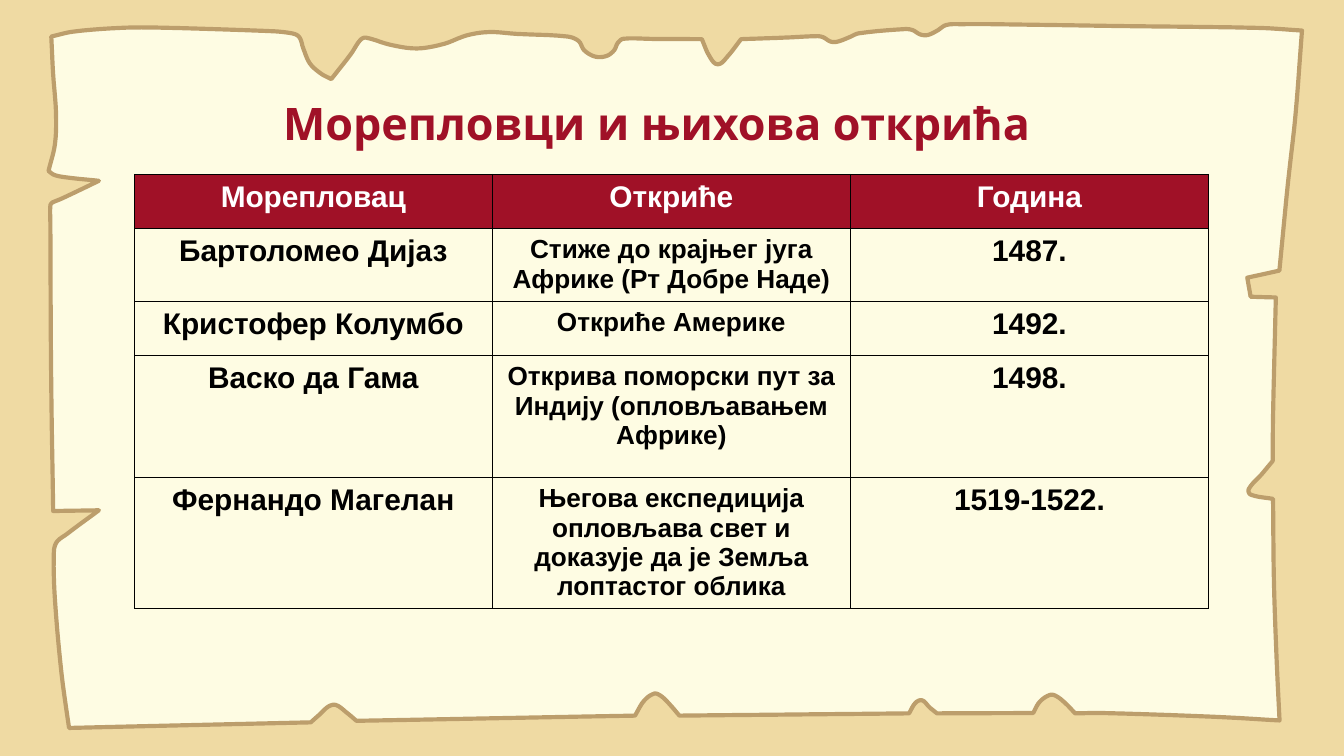
"""Builds a slide with a table of seafarers on a torn parchment."""
import math

from lxml import etree
from pptx import Presentation
from pptx.dml.color import RGBColor
from pptx.enum.shapes import MSO_SHAPE
from pptx.enum.text import MSO_ANCHOR, PP_ALIGN
from pptx.oxml.ns import qn
from pptx.util import Pt

RECTANGLE = MSO_SHAPE.RECTANGLE
BOTTOM = MSO_ANCHOR.BOTTOM
CENTER = PP_ALIGN.CENTER

SAND = RGBColor(0xEF, 0xDA, 0xA3)
PARCHMENT = RGBColor(0xFE, 0xFC, 0xE3)
EDGE = RGBColor(0xBC, 0x9E, 0x6C)
CRIMSON = RGBColor(0xA0, 0x11, 0x27)
WHITE = RGBColor(0xFF, 0xFF, 0xFF)
BLACK = RGBColor(0x00, 0x00, 0x00)

WIDTH, HEIGHT = 720, 405
CURVE_STEPS = 5
TORN_START = (27.5, 19.6)
TORN_STROKES = [
    [(39, 17), (64, 15), (84, 14.8), (142, 16.6), (154, 17.5), (160, 19.5),
     (162.5, 26), (166, 34), (172, 39.5), (177.5, 42.4)],
    [(188, 29), (193, 21.5), (196, 20.2), (209, 24), (223.5, 26), (238, 23.5),
     (250, 19), (262, 17.2), (277, 18.2), (304, 19.6), (310, 22), (313, 27),
     (319, 30.4), (325, 30), (329, 27), (331, 23), (334, 20.8), (350, 20.9),
     (376, 21)],
    [(380, 30), (384.5, 34.5), (390, 30), (397, 21)],
    [(420, 20.2), (438, 19.4), (441, 20), (445, 22.3), (448.5, 22.4),
     (455, 20), (460, 17.9), (485, 15.6), (489, 16.2), (493, 18.5),
     (497, 18.8), (502, 16.5), (507, 13.4), (516, 13), (532, 13), (602, 14),
     (675, 15), (697.5, 16.4)],
    [(694, 62), (690, 98), (685.4, 145)],
    [(668.2, 148.8)],
    [(670, 159)],
    [(683.5, 159.4)],
    [(682, 223), (681.8, 247)],
    [(676, 254), (669, 262), (670, 265), (682, 267.3)],
    [(682.5, 312), (684, 355), (685.5, 386)],
    [(650, 384), (590, 382), (576, 382.2)],
    [(571, 377), (566, 373), (562.5, 372.3), (557, 376), (553.5, 382)],
    [(502, 382.2)],
    [(498, 379), (494, 375.2), (490.5, 376.5), (487, 382.2)],
    [(364, 383.4)],
    [(358, 376.5), (354, 372.8), (350.5, 371.6), (345, 375.5), (340.2, 383.4)],
    [(191, 386.2)],
    [(186, 382), (180, 377.7), (176, 378.5), (171, 383), (166.5, 387)],
    [(37, 390)],
    [(33, 361), (29.5, 322), (28.8, 299), (30, 291), (36, 286), (53, 273.4)],
    [(28.5, 273.8)],
    [(27.4, 200), (27, 120), (27, 110), (28, 108.5)],
    [(34, 106), (53, 96.9)],
    [(35, 95), (29, 93.7), (26, 91.6)],
    [(29.5, 77), (30, 60), (28.5, 40), TORN_START],
]

COLUMN_WIDTH = 191.8
ROW_HEIGHTS = [29, 39.1, 29, 65.3, 70.2]
VOYAGES = [
    ("Морепловац", "Откриће", "Година"),
    ("Бартоломео Дијаз", "Стиже до крајњег југа Африке (Рт Добре Наде)", "1487."),
    ("Кристофер Колумбо", "Откриће Америке", "1492."),
    ("Васко да Гама", "Открива поморски пут за Индију (опловљавањем Африке)", "1498."),
    ("Фернандо Магелан",
     "Његова експедиција опловљава свет и доказује да је Земља лоптастог облика",
     "1519-1522."),
]


def smooth(points):
    """Return points on a smooth curve through the given ones, without the first."""
    last = len(points) - 1
    directions = []
    for index in range(last + 1):
        before, after = points[max(index - 1, 0)], points[min(index + 1, last)]
        span = math.dist(before, after)
        directions.append([(b - a) / span for a, b in zip(before, after)])
    curve = []
    for index in range(last):
        start, end = points[index], points[index + 1]
        chord = math.dist(start, end)
        for step in range(1, CURVE_STEPS + 1):
            t = step / CURVE_STEPS
            blend = t * t * (3 - 2 * t)
            leave, arrive = t * (1 - t) ** 2 * chord, t * t * (t - 1) * chord
            curve.append(tuple(
                start[axis] + blend * (end[axis] - start[axis])
                + leave * directions[index][axis]
                + arrive * directions[index + 1][axis]
                for axis in (0, 1)))
    return curve


class SlideWriter:
    """Holds the style and the current slide."""

    def __init__(self, slide):
        self.shapes = slide.shapes
        self.table_font = "Arial"
        self.title_font = "Open Sans"

    def style(self, frame, font, size, color):
        """Centre and format all text of a frame."""
        for para in frame.paragraphs:
            para.alignment = CENTER
            for span in para.runs:
                span.font.name = font
                span.font.size = Pt(size)
                span.font.bold = True
                span.font.color.rgb = color

    def backdrop(self, color):
        """Cover the page with one colour."""
        box = self.shapes.add_shape(RECTANGLE, 0, 0, Pt(WIDTH), Pt(HEIGHT))
        box.shadow.inherit = False
        box.fill.solid()
        box.fill.fore_color.rgb = color
        box.line.fill.background()

    def torn_sheet(self, start, strokes):
        """Draw a closed sheet whose strokes meet in sharp corners."""
        outline = []
        corner = start
        for stroke in strokes:
            outline += smooth([corner] + stroke)
            corner = stroke[-1]
        builder = self.shapes.build_freeform(Pt(start[0]), Pt(start[1]))
        builder.add_line_segments([(Pt(x), Pt(y)) for x, y in outline])
        sheet = builder.convert_to_shape()
        sheet.shadow.inherit = False
        sheet.fill.solid()
        sheet.fill.fore_color.rgb = PARCHMENT
        sheet.line.color.rgb = EDGE
        sheet.line.width = Pt(2.25)

    def title(self, text, left, top, width, height):
        """Add the heading."""
        box = self.shapes.add_textbox(Pt(left), Pt(top), Pt(width), Pt(height))
        frame = box.text_frame
        frame.word_wrap = True
        frame.vertical_anchor = BOTTOM
        frame.margin_top = frame.margin_bottom = Pt(7.2)
        frame.text = text
        self.style(frame, self.title_font, 24, CRIMSON)

    def border(self, cell):
        """Give a cell thin black edges."""
        properties = cell._tc.get_or_add_tcPr()
        for position, side in enumerate(("lnL", "lnR", "lnT", "lnB")):
            line = etree.Element(qn("a:" + side), w=str(Pt(0.25)))
            fill = etree.SubElement(line, qn("a:solidFill"))
            etree.SubElement(fill, qn("a:srgbClr"), val=str(BLACK))
            properties.insert(position, line)

    def table(self, rows, left, top):
        """Add a table with a filled header row."""
        columns = len(rows[0])
        table = self.shapes.add_table(
            len(rows), columns, Pt(left), Pt(top),
            Pt(COLUMN_WIDTH * columns), Pt(sum(ROW_HEIGHTS))).table
        table.horz_banding = False
        for column in table.columns:
            column.width = Pt(COLUMN_WIDTH)
        for row_index, texts in enumerate(rows):
            table.rows[row_index].height = Pt(ROW_HEIGHTS[row_index])
            header = row_index == 0
            for column_index, text in enumerate(texts):
                cell = table.cell(row_index, column_index)
                cell.text_frame.text = text
                size = 14 if column_index == 1 and not header else 16
                self.style(cell.text_frame, self.table_font, size,
                           WHITE if header else BLACK)
                if header:
                    cell.fill.solid()
                    cell.fill.fore_color.rgb = CRIMSON
                else:
                    cell.fill.background()
                self.border(cell)


def main():
    """Build and save the deck."""
    deck = Presentation()
    deck.slide_width, deck.slide_height = Pt(WIDTH), Pt(HEIGHT)
    page = SlideWriter(deck.slides.add_slide(deck.slide_layouts[6]))
    page.backdrop(SAND)
    page.torn_sheet(TORN_START, TORN_STROKES)
    page.table(VOYAGES, 72, 93.3)
    page.title("Морепловци и њихова открића", 135.4, 52.6, 432.7, 34.6)
    deck.save("out.pptx")


if __name__ == "__main__":
    main()
